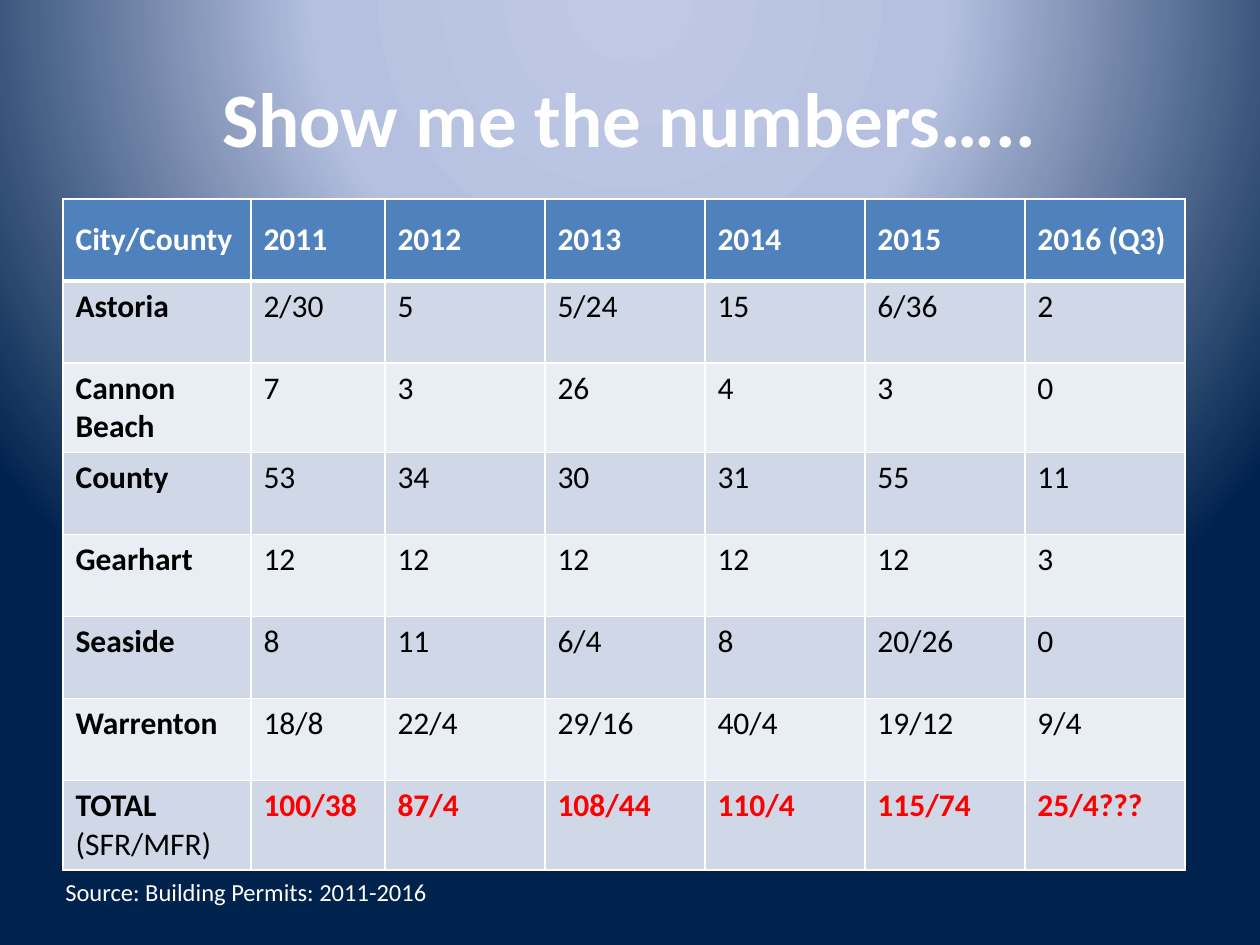
from lxml import etree
from pptx import Presentation
from pptx.dml.color import RGBColor
from pptx.enum.text import MSO_ANCHOR, MSO_AUTO_SIZE, PP_ALIGN
from pptx.oxml.ns import qn
from pptx.util import Pt

LEFT, CENTER = PP_ALIGN.LEFT, PP_ALIGN.CENTER
TOP, MIDDLE = MSO_ANCHOR.TOP, MSO_ANCHOR.MIDDLE
GROW, FIXED = MSO_AUTO_SIZE.SHAPE_TO_FIT_TEXT, MSO_AUTO_SIZE.NONE

SCALE = 914400 / 126
WIDE, HIGH = 1260, 945
WHITE, BLACK, RED = "FFFFFF", "000000", "FF0000"
BLUE, BANDS = "4F81BD", ("D0D8E8", "E9EDF4")
GLOW = [(0, "BFC9E5"), (40, "B5C0E0"), (100, "00234D")]

COLS = [188, 134] + [160] * 5
ROW = 82
HEAD = ["City/County", "2011", "2012", "2013", "2014", "2015", "2016 (Q3)"]
TOWNS = [
    ["Astoria", "2/30", "5", "5/24", "15", "6/36", "2"],
    ["Cannon Beach", "7", "3", "26", "4", "3", "0"],
    ["County", "53", "34", "30", "31", "55", "11"],
    ["Gearhart", "12", "12", "12", "12", "12", "3"],
    ["Seaside", "8", "11", "6/4", "8", "20/26", "0"],
    ["Warrenton", "18/8", "22/4", "29/16", "40/4", "19/12", "9/4"],
]
TOTAL = ["TOTAL", "100/38", "87/4", "108/44", "110/4", "115/74", "25/4???"]
UNITS = "(SFR/MFR)"


def emu(px):
    return round(px * SCALE)


def rgb(code):
    return RGBColor.from_string(code)


def paint(node, code):
    """Add a solid fill to a line node."""
    fill = etree.SubElement(node, qn("a:solidFill"))
    etree.SubElement(fill, qn("a:srgbClr"), val=code)


class Deck:
    def __init__(self, font="Calibri"):
        self.font = font
        self.file = Presentation()
        self.file.slide_width, self.file.slide_height = emu(WIDE), emu(HIGH)
        self.slide = self.file.slides.add_slide(self.file.slide_layouts[6])

    def glow(self, stops):
        """Fill the background with a circular gradient centred above the slide."""
        back = self.slide.background.fill
        back.gradient()
        grad = self.slide.background._cSld.find(".//" + qn("a:gradFill"))
        for node in list(grad):
            grad.remove(node)
        group = etree.SubElement(grad, qn("a:gsLst"))
        for place, code in stops:
            stop = etree.SubElement(group, qn("a:gs"), pos=str(place * 1000))
            etree.SubElement(stop, qn("a:srgbClr"), val=code)
        ring = etree.SubElement(grad, qn("a:path"))
        ring.set("path", "circle")
        etree.SubElement(ring, qn("a:fillToRect"),
                         l="50000", t="-80000", r="50000", b="180000")

    def run(self, para, text, size, color, bold=False):
        run = para.add_run()
        run.text = text
        font = run.font
        font.name, font.size, font.bold = self.font, Pt(size), bold
        font.color.rgb = rgb(color)

    def text(self, box, text, size, bold=False, align=LEFT, anchor=TOP, fit=FIXED):
        frame = self.slide.shapes.add_textbox(*map(emu, box)).text_frame
        frame.word_wrap = True
        frame.auto_size, frame.vertical_anchor = fit, anchor
        para = frame.paragraphs[0]
        para.alignment = align
        self.run(para, text, size, WHITE, bold)

    def cell(self, cell, text, color, bold, fill, anchor=TOP, upper=1, lower=1):
        """Fill one cell; upper and lower are border widths in points."""
        cell.fill.solid()
        cell.fill.fore_color.rgb = rgb(fill)
        cell.vertical_anchor = anchor
        self.run(cell.text_frame.paragraphs[0], text, 18, color, bold)
        props = cell._tc.get_or_add_tcPr()
        sides = {"L": 1, "R": 1, "T": upper, "B": lower}
        for spot, (side, width) in enumerate(sides.items()):
            line = etree.Element(qn("a:ln" + side), w=str(Pt(width)))
            paint(line, WHITE)
            props.insert(spot, line)

    def table(self, left, top):
        rows = [HEAD, *TOWNS, TOTAL]
        box = (left, top, sum(COLS), ROW * len(rows))
        grid = self.slide.shapes.add_table(
            len(rows), len(COLS), *map(emu, box)).table
        for col, width in zip(grid.columns, COLS):
            col.width = emu(width)
        for r, row in enumerate(rows):
            grid.rows[r].height = emu(ROW)
            for c, text in enumerate(row):
                cell = grid.cell(r, c)
                if r == 0:
                    self.cell(cell, text, WHITE, True, BLUE, MIDDLE, lower=3)
                    continue
                last = row is TOTAL
                color = RED if last and c else BLACK
                self.cell(cell, text, color, last or c == 0,
                          BANDS[(r - 1) % 2], upper=3 if r == 1 else 1)
        para = grid.cell(len(rows) - 1, 0).text_frame.paragraphs[0]
        para.add_line_break()
        self.run(para, UNITS, 18, BLACK)


def main():
    deck = Deck()
    deck.glow(GLOW)
    deck.text((63, 38, 1134, 158), "Show me the numbers…..", 44, True, CENTER, MIDDLE)
    deck.table(63, 199)
    deck.text((53, 871, 557, 43), "Source: Building Permits: 2011-2016", 14, fit=GROW)
    deck.file.save("out.pptx")


if __name__ == "__main__":
    main()
